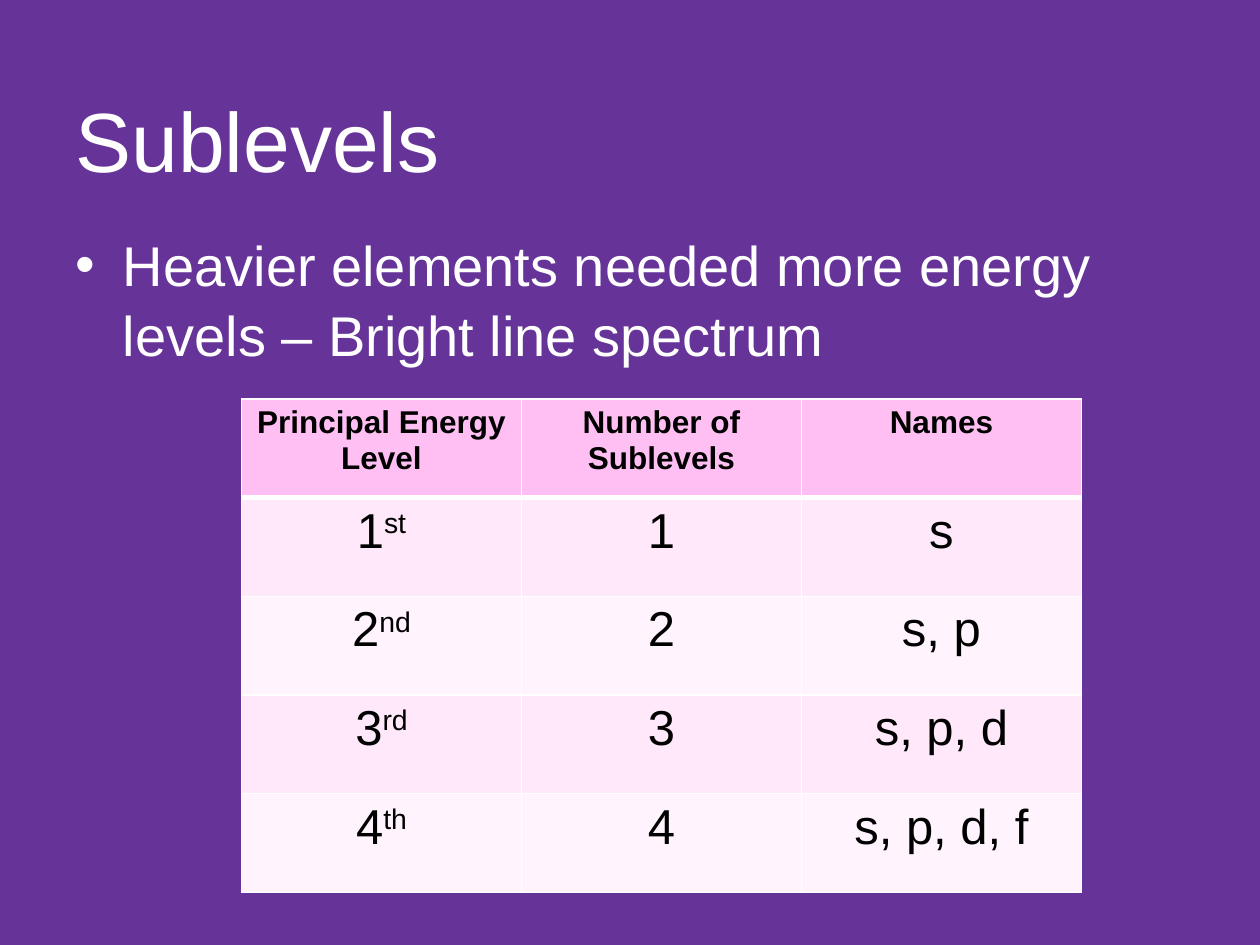
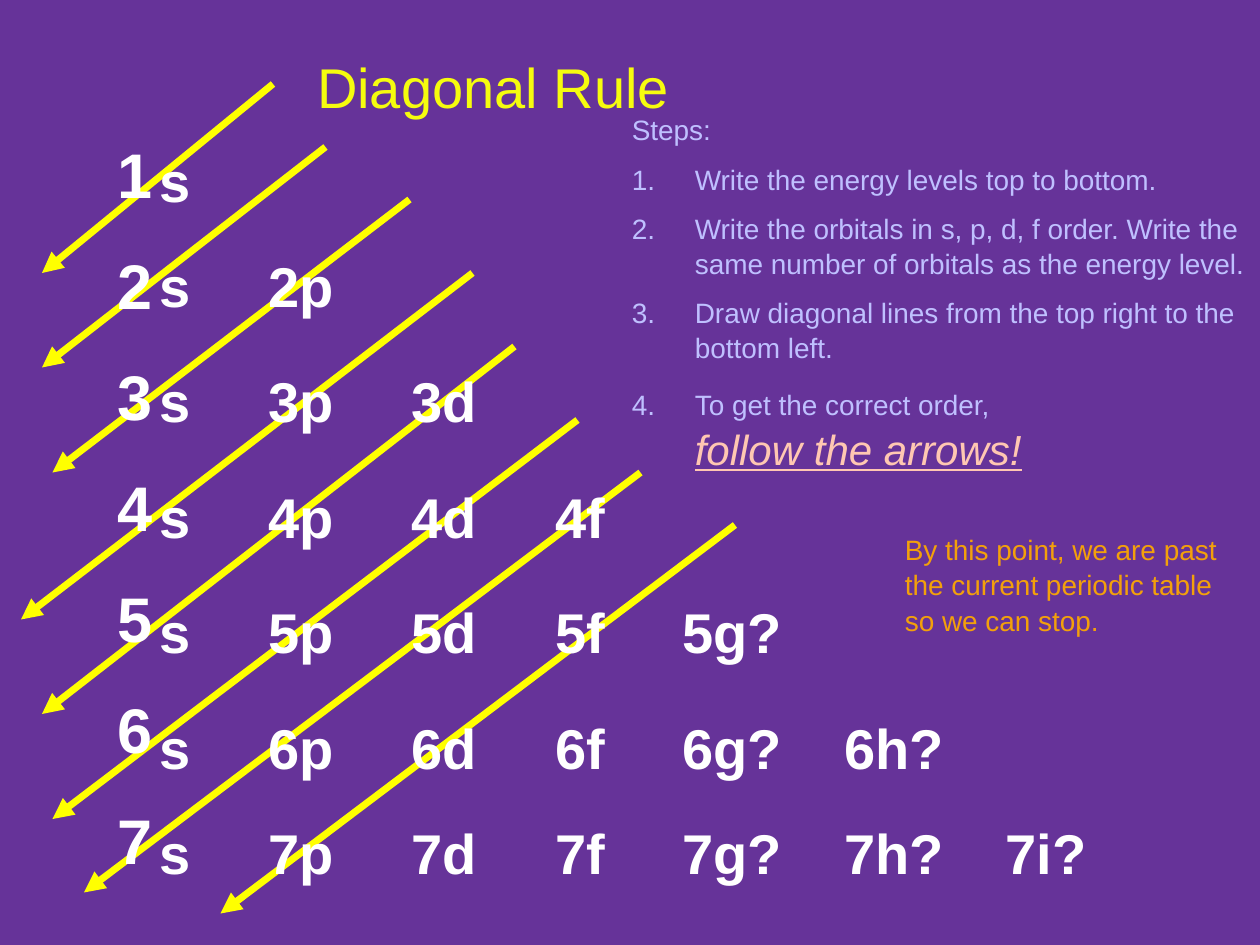
from lxml.etree import SubElement
from pptx import Presentation
from pptx.dml.color import RGBColor
from pptx.enum.shapes import MSO_CONNECTOR
from pptx.enum.text import MSO_ANCHOR, MSO_AUTO_SIZE, PP_ALIGN
from pptx.oxml.ns import qn
from pptx.util import Pt

PX = 7620  # EMU per px, 120 px to the inch
FONT = "Arial"
COLORS = {
    "background": "663399", "white": "FFFFFF", "black": "000000",
    "title": "F6FC0E", "arrow": "FFFF00", "steps": "BFC0FF",
    "emphasis": "FFC7B2", "note": "F3A00B",
    "header": "FFBFF3", "odd": "FFE8FA", "even": "FFF4FD",
}


def rgb(name):
    return RGBColor.from_string(COLORS[name])


class SlideBuilder:
    """Holds the deck style and the slide being built."""

    line_spacing = 1.05

    def __init__(self, deck):
        self.deck = deck
        self.page = None
        fill = deck.slide_master.background.fill
        fill.solid()
        fill.fore_color.rgb = rgb("background")

    def new_page(self, layout):
        self.page = self.deck.slides.add_slide(self.deck.slide_layouts[layout])

    def span(self, para, text, size, color, bold=False, raised=False):
        span = para.add_run()
        span.text = text
        font = span.font
        font.name, font.size, font.bold = FONT, Pt(size), bold
        font.color.rgb = rgb(color)
        if raised:
            font._element.set("baseline", "30000")
        return span

    def place(self, shape, area):
        shape.left, shape.top, shape.width, shape.height = (PX * n for n in area)

    def para(self, frame, first, before=0):
        para = frame.paragraphs[0] if first else frame.add_paragraph()
        para.alignment = PP_ALIGN.LEFT
        para.line_spacing = self.line_spacing
        para.space_before = Pt(0 if first else before)
        return para

    def title(self, text, area, size, color):
        shape = self.page.shapes.title
        self.place(shape, area)
        frame = shape.text_frame
        frame.auto_size = MSO_AUTO_SIZE.NONE
        frame.vertical_anchor = MSO_ANCHOR.BOTTOM
        para = frame.paragraphs[0]
        para.alignment = PP_ALIGN.LEFT
        self.span(para, text, size, color)

    def body(self, text, area, size):
        shape = self.page.placeholders[1]
        self.place(shape, area)
        shape.text_frame.auto_size = MSO_AUTO_SIZE.NONE
        self.span(self.para(shape.text_frame, True), text, size, "white")

    def box(self, area):
        frame = self.page.shapes.add_textbox(*(PX * n for n in area)).text_frame
        frame.word_wrap = True
        return frame

    def text(self, lines, area, size, color, bold=False):
        frame = self.box(area)
        for index, line in enumerate(lines):
            para = self.para(frame, index == 0, size / 2)
            self.span(para, line, size, color, bold)

    def tabbed(self, items, stops, area, size):
        para = self.para(self.box(area), True)
        tabs = SubElement(para._p.get_or_add_pPr(), qn("a:tabLst"))
        for stop in stops:
            SubElement(tabs, qn("a:tab"), pos=str(PX * stop), algn="l")
        self.span(para, "\t".join(items), size, "white", True)

    def steps(self, heading, steps, ending, area, size, end_size):
        frame = self.box(area)
        for index, line in enumerate([heading, *steps]):
            last = index == len(steps)
            para = self.para(frame, index == 0, (end_size if last else size) / 2)
            props = para._p.get_or_add_pPr()
            props.set("marL", str(60 * PX))
            props.set("indent", str(-60 * PX))
            if index:
                SubElement(props, qn("a:buAutoNum"), type="arabicPeriod")
            self.span(para, line, size, "steps")
        para.add_line_break()
        span = self.span(para, ending, end_size, "emphasis")
        span.font.italic = span.font.underline = True

    def arrow(self, start, end):
        line = self.page.shapes.add_connector(
            MSO_CONNECTOR.STRAIGHT, *(PX * n for n in start + end))
        line.line.color.rgb = rgb("arrow")
        line.line.width = Pt(4)
        props = line._element.spPr
        SubElement(props.find(qn("a:ln")), qn("a:tailEnd"), type="triangle")
        SubElement(props, qn("a:effectLst"))

    def borders(self, cell, bottom):
        props = cell._tc.get_or_add_tcPr()
        for side, width in (("L", 1), ("R", 1), ("T", 1), ("B", bottom)):
            line = SubElement(props, qn(f"a:ln{side}"), w=str(Pt(width)))
            fill = SubElement(line, qn("a:solidFill"))
            SubElement(fill, qn("a:srgbClr"), val=COLORS["white"])

    def table(self, rows, area):
        """Each cell is a list of paragraphs; each paragraph is (text, raised suffix)."""
        grid = self.page.shapes.add_table(
            len(rows), len(rows[0]), *(PX * n for n in area)).table
        for r, row in enumerate(rows):
            for c, lines in enumerate(row):
                cell = grid.cell(r, c)
                self.borders(cell, 1 if r else 3)
                cell.fill.solid()
                cell.fill.fore_color.rgb = rgb(
                    ("odd" if r % 2 else "even") if r else "header")
                for index, (text, suffix) in enumerate(lines):
                    frame = cell.text_frame
                    para = frame.add_paragraph() if index else frame.paragraphs[0]
                    para.alignment = PP_ALIGN.CENTER
                    size = 28 if r else 18
                    self.span(para, text, size, "black", r == 0)
                    if suffix:
                        self.span(para, suffix, size, "black", raised=True)


def sublevels(builder):
    builder.new_page(1)
    builder.title("Sublevels", (60, 36, 1080, 150), 48, "white")
    builder.body("Heavier elements needed more energy levels – Bright line spectrum",
                 (60, 210, 1080, 170), 32)
    rows = [[[("Principal Energy", ""), ("Level", "")],
             [("Number of Sublevels", "")], [("Names", "")]]]
    for level, suffix in enumerate(("st", "nd", "rd", "th"), 1):
        names = ", ".join("spdf"[:level])
        rows.append([[(str(level), suffix)], [(str(level), "")], [(names, "")]])
    builder.table(rows, (230, 380, 800, 470))


def diagonal_rule(builder):
    builder.new_page(5)
    builder.title("Diagonal Rule", (290, 0, 570, 120), 32, "title")

    # Diagonal arrows, top right to bottom left
    for start, end in (
        ((260, 80), (40, 260)), ((310, 140), (40, 350)),
        ((390, 190), (50, 450)), ((450, 260), (20, 590)),
        ((490, 330), (40, 680)), ((550, 400), (50, 780)),
        ((610, 450), (80, 850)), ((700, 500), (210, 870)),
    ):
        builder.arrow(start, end)

    # Orbitals: one more per energy level
    orbitals = ("p", "d", "f", "g?", "h?", "i?")
    stops = (104, 240, 377, 498, 652, 806)
    tops = (130, 230, 340, 450, 560, 670, 770)
    widths = (50, 400, 510, 520, 720, 860, 1060)
    for level, (top, width) in enumerate(zip(tops, widths), 1):
        items = ["s"] + [f"{level}{name}" for name in orbitals[:level - 1]]
        builder.tabbed(items, stops[:level - 1], (140, top, width, 76), 32)
    builder.text([str(level) for level in range(1, 8)],
                 (100, 120, 50, 733), 36, "white", True)

    # Instructions and closing note
    builder.steps("Steps:", [
        "Write the energy levels top to bottom.",
        "Write the orbitals in s, p, d, f order. Write the same number of "
        "orbitals as the energy level.",
        "Draw diagonal lines from the top right to the bottom left.",
        "To get the correct order,",
    ], "follow the arrows!", (590, 100, 610, 380), 16, 24)
    builder.text(["By this point, we are past the current periodic table "
                  "so we can stop."], (850, 500, 350, 108), 16, "note")


def main():
    deck = Presentation()
    deck.slide_width, deck.slide_height = 1200 * PX, 900 * PX
    builder = SlideBuilder(deck)
    sublevels(builder)
    diagonal_rule(builder)
    deck.save("out.pptx")


if __name__ == "__main__":
    main()
